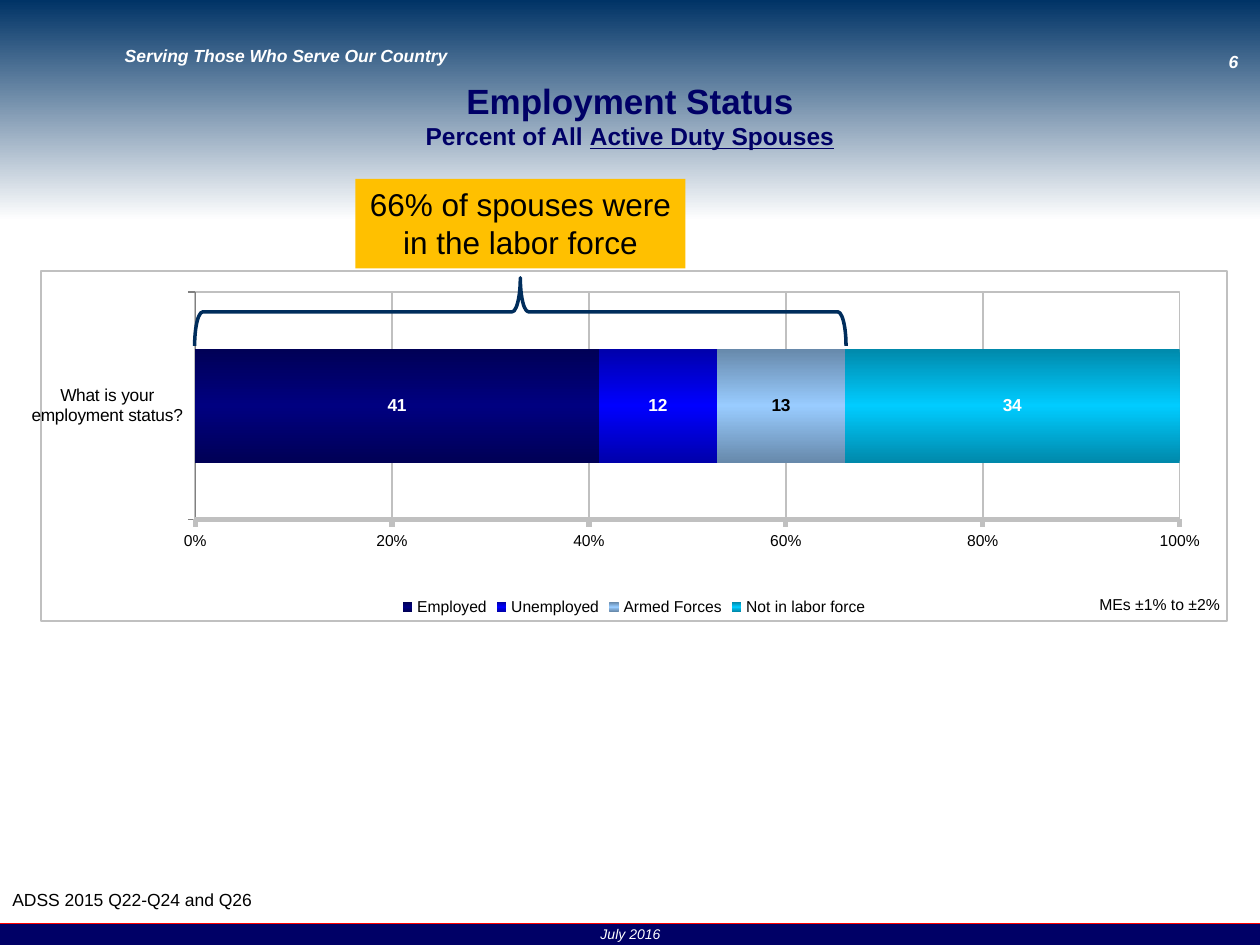
from dataclasses import dataclass

import pptx
import pptx.chart.data
import pptx.dml.color
import pptx.enum.chart
import pptx.enum.shapes
import pptx.enum.text
import pptx.oxml
import pptx.oxml.ns
import pptx.util

Inches, Pt = pptx.util.Inches, pptx.util.Pt
Align, Anchor = pptx.enum.text.PP_ALIGN, pptx.enum.text.MSO_ANCHOR
Shape = pptx.enum.shapes.MSO_SHAPE
NS = " ".join(pptx.oxml.ns.nsdecls(p) for p in ("a", "c"))
NAVY, GRAY, WHITE, BLACK = "000066", "C0C0C0", "FFFFFF", "000000"


@dataclass
class Note:
    text: str
    box: tuple
    size: float
    color: str = BLACK
    align: Align = Align.LEFT
    anchor: Anchor = Anchor.TOP
    inset: tuple = (0.1, 0.05, 0.1, 0.05)
    bold: bool = False
    italic: bool = False
    space: float = 1.0


@dataclass
class Part:
    name: str
    value: int
    edge: str
    mid: str
    label: str = WHITE


NOTES = [
    Note("Serving Those Who Serve Our Country", (0.99, 0.34, 4.06, 0.28), 10, WHITE,
         anchor=Anchor.MIDDLE, inset=(0, 0, 0, 0.02), bold=True, italic=True, space=0.5),
    Note("6", (9.59, 0.4, 0.4, 0.17), 10, WHITE, Align.CENTER, Anchor.BOTTOM,
         (0.02, 0, 0.02, 0), bold=True, italic=True),
    Note("ADSS 2015 Q22-Q24 and Q26", (0, 7.01, 3.47, 0.49), 10),
    Note("MEs ±1% to ±2%", (4.92, 4.67, 4.86, 0.49), 9, align=Align.RIGHT),
    Note("July 2016", (4.17, 7.35, 1.67, 0.15), 8, WHITE, Align.CENTER, Anchor.BOTTOM,
         (0.1, 0, 0.1, 0.02), italic=True),
]
CALL = Note("66% of spouses were in the labor force", (2.82, 1.42, 2.62, 0.71), 18,
            align=Align.CENTER)
PARTS = [
    Part("Employed", 41, "000056", "000080"),
    Part("Unemployed", 12, "0000AB", "0000FF"),
    Part("Armed Forces", 13, "6789AB", "99CCFF", BLACK),
    Part("Not in labor force", 34, "0089AB", "00CCFF"),
]


def rgb(code: str):
    return pptx.dml.color.RGBColor.from_string(code)


def style(font, size: float, color: str = BLACK, bold: bool = False, italic: bool = False):
    font.name, font.size = "Arial", Pt(size)
    font.bold, font.italic = bold, italic
    font.color.rgb = rgb(color)


def stroke(line, color: str, width: float):
    line.color.rgb, line.width = rgb(color), Pt(width)


def blend(fill, owner, colors: list):
    """Fill owner with evenly spaced colours from top to bottom."""
    fill.background()
    step = 100000 // (len(colors) - 1)
    stops = "".join(f'<a:gs pos="{i * step}"><a:srgbClr val="{c}"/></a:gs>'
                    for i, c in enumerate(colors))
    grad = pptx.oxml.parse_xml(f'<a:gradFill {NS} rotWithShape="1"><a:gsLst>{stops}</a:gsLst>'
                               '<a:lin ang="5400000" scaled="0"/></a:gradFill>')
    blank = owner.find(".//" + pptx.oxml.ns.qn("a:noFill"))
    blank.getparent().replace(blank, grad)


def frame(width: float):
    return pptx.oxml.parse_xml(
        f'<c:spPr {NS}><a:noFill/><a:ln w="{Pt(width)}"><a:solidFill>'
        f'<a:srgbClr val="{GRAY}"/></a:solidFill></a:ln></c:spPr>')


def add_shape(slide, kind, box: tuple, fill: str = ""):
    shape = slide.shapes.add_shape(kind, *map(Inches, box))
    shape.shadow.inherit = False
    shape.line.fill.background()
    if fill:
        shape.fill.solid()
        shape.fill.fore_color.rgb = rgb(fill)
    return shape


def write(shape, note: Note):
    frame = shape.text_frame
    frame.word_wrap, frame.vertical_anchor = True, note.anchor
    (frame.margin_left, frame.margin_top,
     frame.margin_right, frame.margin_bottom) = map(Inches, note.inset)
    frame.text = note.text
    for par in frame.paragraphs:
        par.alignment, par.line_spacing = note.align, note.space
        style(par.font, note.size, note.color, note.bold, note.italic)


def add_band(slide):
    top = add_shape(slide, Shape.RECTANGLE, (0, 0, 10, 1.75))
    blend(top.fill, top._element.spPr, ["003366", WHITE])
    foot = add_shape(slide, Shape.RECTANGLE, (0, 7.33, 10, 0.17), NAVY)
    stroke(foot.line, NAVY, 0.75)
    rule = slide.shapes.add_connector(pptx.enum.shapes.MSO_CONNECTOR.STRAIGHT,
                                      0, Inches(7.33), Inches(10), Inches(7.33))
    stroke(rule.line, "FF0000", 0.75)
    rule._element.spPr.append(pptx.oxml.parse_xml(f"<a:effectLst {NS}/>"))


def add_title(slide):
    title = slide.shapes.title
    slide.shapes._spTree.append(title._element)
    title.left, title.top, title.width, title.height = map(Inches, (0, 0.58, 10, 0.67))
    write(title, Note("Employment Status\nPercent of All ", (), 20, NAVY, Align.CENTER,
                      inset=(0.05,) * 4, bold=True))
    title.text_frame.auto_size = pptx.enum.text.MSO_AUTO_SIZE.NONE
    for par in title.text_frame.paragraphs:
        par.space_before = Pt(0)
    par.font.size = Pt(14)
    run = par.add_run()
    run.text, run.font.underline = "Active Duty Spouses", True


def add_bar(slide):
    enum = pptx.enum.chart
    data = pptx.chart.data.CategoryChartData()
    data.categories = ["What is your employment status?"]
    for part in PARTS:
        data.add_series(part.name, [part.value])
    chart = slide.shapes.add_chart(enum.XL_CHART_TYPE.BAR_STACKED_100,
                                   *map(Inches, (0.25, 2.14, 9.5, 2.8)), data).chart
    style(chart.font, 18)
    chart.has_title = False
    chart.has_legend = True
    chart.legend.position = enum.XL_LEGEND_POSITION.BOTTOM
    chart.legend.include_in_layout = False
    style(chart.legend.font, 9)

    plot = chart.plots[0]
    plot.gap_width = plot.overlap = 100
    plot.vary_by_categories = False
    for part, series in zip(PARTS, plot.series):
        blend(series.format.fill, series._element, [part.edge, part.mid, part.edge])
        labels = series.data_labels
        labels.show_value = True
        style(labels.font, 10, part.label, bold=True)

    cat, val = chart.category_axis, chart.value_axis
    style(cat.tick_labels.font, 10)
    style(val.tick_labels.font, 9)
    cat.major_tick_mark = val.major_tick_mark = enum.XL_TICK_MARK.OUTSIDE
    stroke(cat.format.line, "808080", 0.75)
    stroke(val.format.line, GRAY, 3)
    val.minimum_scale, val.maximum_scale, val.major_unit = 0, 1, 0.2
    val.tick_labels.number_format = "0%"
    val.tick_labels.number_format_is_linked = False
    val.has_major_gridlines = True
    stroke(val.major_gridlines.format.line, GRAY, 1)

    area = chart._chartSpace.chart.plotArea
    for old in area.findall(pptx.oxml.ns.qn("c:layout")):
        area.remove(old)
    spots = "".join(f'<c:{k} val="{v}"/>' for k, v in (
        ("layoutTarget", "inner"), ("xMode", "edge"), ("yMode", "edge"),
        ("x", 0.13), ("y", 0.06), ("w", 0.83), ("h", 0.65)))
    area.insert(0, pptx.oxml.parse_xml(
        f"<c:layout {NS}><c:manualLayout>{spots}</c:manualLayout></c:layout>"))
    area.append(frame(1))
    chart._chartSpace.chart.addnext(frame(1.5))


def add_brace(slide):
    brace = add_shape(slide, Shape.RIGHT_BRACE, (3.86, -0.11, 0.54, 5.17))
    brace.fill.background()
    brace.rotation = 270
    brace.adjustments[0], brace.adjustments[1] = 0.12, 0.5
    stroke(brace.line, "002D5C", 2)


def main():
    deck = pptx.Presentation()
    deck.slide_width, deck.slide_height = Inches(10), Inches(7.5)
    slide = deck.slides.add_slide(deck.slide_layouts[5])
    add_band(slide)
    add_title(slide)
    add_bar(slide)
    write(add_shape(slide, Shape.RECTANGLE, CALL.box, "FFC000"), CALL)
    add_brace(slide)
    for note in NOTES:
        write(slide.shapes.add_textbox(*map(Inches, note.box)), note)
    deck.save("out.pptx")


if __name__ == "__main__":
    main()
